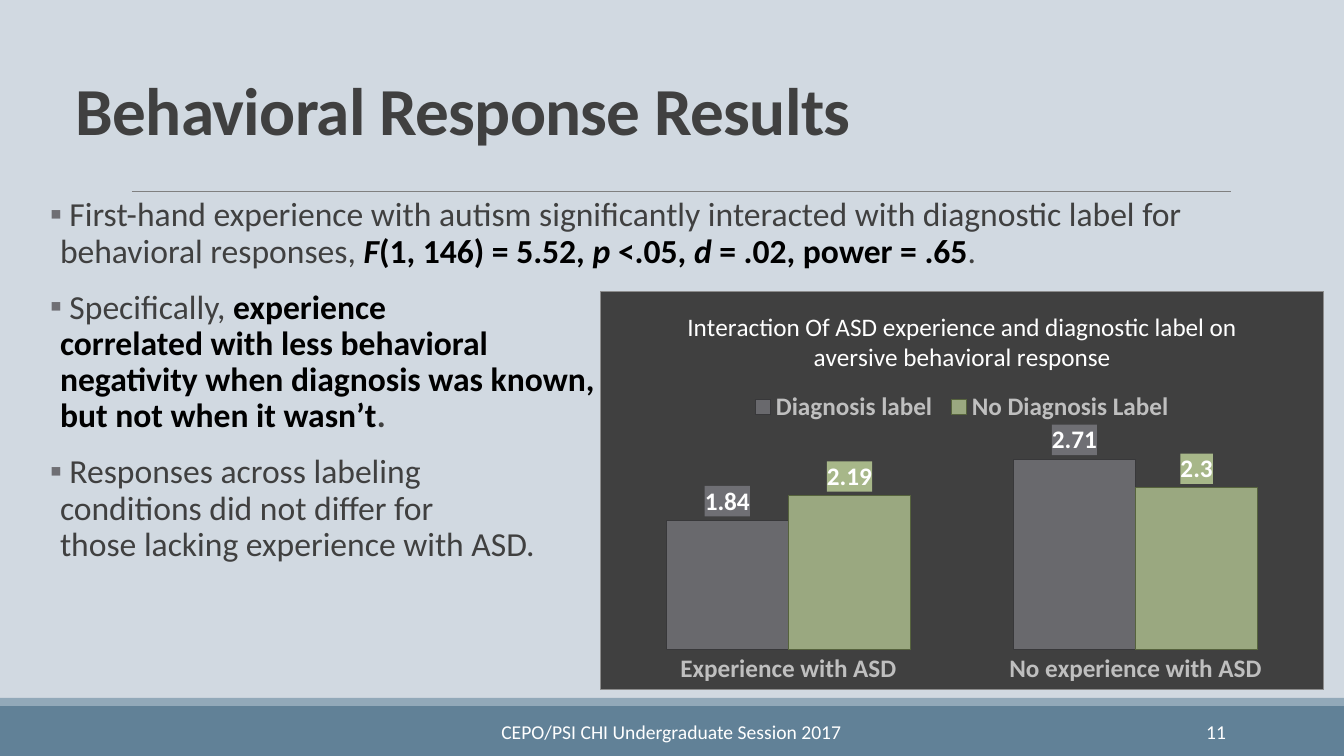
"""Build the Behavioral Response Results slide with its interaction chart."""
import dataclasses
import typing

import pptx
import pptx.chart.data
import pptx.chart.series
import pptx.dml.color
import pptx.enum.chart
import pptx.enum.shapes
import pptx.enum.text
import pptx.oxml
import pptx.oxml.ns
import pptx.slide
import pptx.util

RGBColor = pptx.dml.color.RGBColor
ALIGN = pptx.enum.text.PP_ALIGN
ANCHOR = pptx.enum.text.MSO_ANCHOR
BACKGROUND = RGBColor(0xD1, 0xD9, 0xE1)
BAND = RGBColor(0x61, 0x81, 0x97)
STRIPE = RGBColor(0x92, 0xA9, 0xB9)
RULE = RGBColor(0x80, 0x80, 0x80)
DARK = RGBColor(0x40, 0x40, 0x40)
BLACK = RGBColor(0, 0, 0)
WHITE = RGBColor(0xFF, 0xFF, 0xFF)
PALE = RGBColor(0xBF, 0xBF, 0xBF)
BORDER = RGBColor(0x8C, 0x8C, 0x8C)
GREY = RGBColor(0x6F, 0x6F, 0x74)
GREY_EDGE = RGBColor(0x38, 0x38, 0x3A)
GREEN = RGBColor(0xA7, 0xB7, 0x89)
GREEN_EDGE = RGBColor(0x56, 0x63, 0x3D)
FONT = "Calibri"
EMU_PER_PX = 914400 / 100.8


@dataclasses.dataclass(frozen=True)
class Box:
    left: int
    top: int
    width: int
    height: int

    def emu(self) -> tuple[int, ...]:
        return tuple(px(side) for side in dataclasses.astuple(self))


@dataclasses.dataclass(frozen=True)
class Piece:
    text: str
    color: RGBColor = DARK
    bold: bool = False
    italic: bool = False


@dataclasses.dataclass(frozen=True)
class Label:
    box: Box
    pieces: list[list[Piece]]
    size: int
    frame: dict[str, typing.Any]
    paragraph: dict[str, typing.Any]
    bullet: bool = False
    spacing: int = 0


@dataclasses.dataclass(frozen=True)
class Condition:
    name: str
    means: tuple[float, float]
    color: RGBColor
    edge: RGBColor


def stat(text: str, italic: bool = False) -> Piece:
    return Piece(text, BLACK, True, italic)


BANDS = [(Box(0, 706, 1344, 50), BAND), (Box(0, 698, 1344, 8), STRIPE)]
FINDINGS = [
    [Piece(" First-hand experience with autism significantly interacted with "
           "diagnostic label for behavioral responses, "),
     stat("F", True), stat("(1, 146) = 5.52, "), stat("p ", True), stat("<.05, "),
     stat("d", True), stat(" = .02, power = .65"), Piece(".")],
    [Piece(" Specifically, "),
     stat("experience\ncorrelated with less behavioral\n"
          "negativity when diagnosis was known,\nbut not when it wasn’t"),
     Piece(".", bold=True)],
    [Piece(" Responses across labeling\nconditions did not differ for\n"
           "those lacking experience with ASD.")],
]
LABELS = [
    Label(Box(66, 60, 1109, 94), [[Piece("Behavioral Response Results", bold=True)]], 48,
          {"vertical_anchor": ANCHOR.BOTTOM}, {"line_spacing": 0.85}, spacing=-50),
    Label(Box(50, 193, 1244, 444), FINDINGS, 24, {"margin_left": 0, "margin_right": 0},
          {"line_spacing": 0.9, "space_before": pptx.util.Pt(12),
           "space_after": pptx.util.Pt(2)}, bullet=True),
    Label(Box(406, 712, 531, 40), [[Piece("CEPO/PSI CHI Undergraduate Session 2017", WHITE)]],
          14, {"vertical_anchor": ANCHOR.MIDDLE}, {"alignment": ALIGN.CENTER}),
    Label(Box(1092, 712, 144, 40), [[Piece("11", WHITE)]],
          14, {"vertical_anchor": ANCHOR.MIDDLE}, {"alignment": ALIGN.RIGHT}),
]
GROUPS = ("Experience with ASD", "No experience with ASD")
CONDITIONS = [
    Condition("Diagnosis label", (1.84, 2.71), GREY, GREY_EDGE),
    Condition("No Diagnosis Label", (2.19, 2.3), GREEN, GREEN_EDGE),
]


def px(length: int) -> int:
    return round(length * EMU_PER_PX)


def xml(markup: str) -> typing.Any:
    head, mark, tail = markup.partition("/>" if markup.find(">") == markup.find("/>") + 1
                                        else ">")
    return pptx.oxml.parse_xml(f"{head} {pptx.oxml.ns.nsdecls('a', 'c')}{mark}{tail}")


def apply(target: typing.Any, values: dict[str, typing.Any]) -> None:
    for name, value in values.items():
        setattr(target, name, value)


def set_font(font: typing.Any, size: int, color: RGBColor, bold: bool = False,
             italic: bool = False) -> None:
    apply(font, {"name": FONT, "size": pptx.util.Pt(size), "bold": bold, "italic": italic})
    font.color.rgb = color


def add_band(slide: pptx.slide.Slide, box: Box, color: RGBColor) -> None:
    band = slide.shapes.add_shape(pptx.enum.shapes.MSO_SHAPE.RECTANGLE, *box.emu())
    band.shadow.inherit = False
    band.fill.solid()
    band.fill.fore_color.rgb = color
    band.line.fill.background()


def add_rule(slide: pptx.slide.Slide) -> None:
    rule = slide.shapes.add_connector(pptx.enum.shapes.MSO_CONNECTOR.STRAIGHT,
                                      px(132), px(191), px(1231), px(191))
    rule.line.color.rgb = RULE
    rule.line.width = pptx.util.Pt(0.5)
    rule._element.spPr.append(xml("<a:effectLst/>"))


def add_label(slide: pptx.slide.Slide, label: Label) -> None:
    frame = slide.shapes.add_textbox(*label.box.emu()).text_frame
    apply(frame, {"word_wrap": True, **label.frame})
    for index, pieces in enumerate(label.pieces):
        paragraph = frame.add_paragraph() if index else frame.paragraphs[0]
        apply(paragraph, label.paragraph)
        if label.bullet:
            properties = paragraph._p.get_or_add_pPr()
            properties.set("marL", str(px(10)))
            properties.set("indent", str(-px(10)))
            for markup in (f'<a:buClr><a:srgbClr val="{GREY}"/></a:buClr>',
                           f'<a:buFont typeface="{FONT}"/>', '<a:buChar char="▪"/>'):
                properties.append(xml(markup))
        for piece in pieces:
            for row, line in enumerate(piece.text.split("\n")):
                if row:
                    paragraph.add_line_break()
                run = paragraph.add_run()
                run.text = line
                set_font(run.font, label.size, piece.color, piece.bold, piece.italic)
                if label.spacing:
                    run._r.get_or_add_rPr().set("spc", str(label.spacing))


def manual_layout(left: float, top: float, width: float, height: float, inner: str = "") -> typing.Any:
    parts = {"xMode": "edge", "yMode": "edge", "x": left, "y": top, "w": width, "h": height}
    body = "".join(f'<c:{tag} val="{value}"/>' for tag, value in parts.items())
    return xml(f"<c:layout><c:manualLayout>{inner}{body}</c:manualLayout></c:layout>")


def style_bars(bars: pptx.chart.series.BarSeries, condition: Condition) -> None:
    bars.format.fill.solid()
    bars.format.fill.fore_color.rgb = condition.color
    bars.format.line.color.rgb = condition.edge
    bars.format.line.width = pptx.util.Pt(0.75)
    bars._element.xpath("c:spPr/a:solidFill/a:srgbClr")[0].append(xml('<a:alpha val="88000"/>'))
    labels = bars.data_labels
    apply(labels, {"show_value": True,
                   "position": pptx.enum.chart.XL_LABEL_POSITION.OUTSIDE_END})
    set_font(labels.font, 18, WHITE, True)
    labels._element.xpath("c:txPr")[0].addprevious(xml(
        f'<c:spPr><a:solidFill><a:srgbClr val="{condition.color}">'
        '<a:alpha val="88000"/></a:srgbClr></a:solidFill></c:spPr>'))


def add_interaction_chart(slide: pptx.slide.Slide) -> None:
    means = pptx.chart.data.CategoryChartData()
    means.categories = GROUPS
    for condition in CONDITIONS:
        means.add_series(condition.name, condition.means)
    chart = slide.shapes.add_chart(pptx.enum.chart.XL_CHART_TYPE.COLUMN_CLUSTERED,
                                   *Box(600, 291, 724, 399).emu(), means).chart
    set_font(chart.font, 10, BLACK)
    apply(chart, {"has_title": True, "has_legend": True})
    title = chart.chart_title.text_frame.paragraphs[0].add_run()
    title.text = ("Interaction Of ASD experience and diagnostic label on "
                  "aversive behavioral response")
    set_font(title.font, 18, WHITE)
    apply(chart.legend, {"position": pptx.enum.chart.XL_LEGEND_POSITION.TOP,
                         "include_in_layout": False})
    set_font(chart.legend.font, 18, PALE, True)
    apply(chart.value_axis, {"visible": False, "has_major_gridlines": False,
                             "minimum_scale": 0, "maximum_scale": 3})
    chart.category_axis.major_tick_mark = pptx.enum.chart.XL_TICK_MARK.NONE
    chart.category_axis.format.line.fill.background()
    set_font(chart.category_axis.tick_labels.font, 18, PALE, True)
    plot = chart.plots[0]
    apply(plot, {"gap_width": 84, "overlap": 0, "vary_by_categories": False})
    for bars, condition in zip(plot.series, CONDITIONS):
        style_bars(bars, condition)
    space = chart._chartSpace
    for old in space.xpath("c:chart/c:plotArea/c:layout | c:chart/c:legend/c:layout"):
        old.getparent().remove(old)
    space.xpath("c:chart/c:plotArea")[0].insert(
        0, manual_layout(0.02, 0.37, 0.96, 0.53, '<c:layoutTarget val="inner"/>'))
    space.xpath("c:chart/c:legend/c:legendPos")[0].addnext(manual_layout(0.2, 0.25, 0.6, 0.08))
    space.xpath("c:chart")[0].addnext(xml(
        f'<c:spPr><a:solidFill><a:srgbClr val="{DARK}"/></a:solidFill><a:ln w="6350">'
        f'<a:solidFill><a:srgbClr val="{BORDER}"/></a:solidFill></a:ln></c:spPr>'))


def main() -> None:
    deck = pptx.Presentation()
    apply(deck, {"slide_width": px(1344), "slide_height": px(756)})
    slide = deck.slides.add_slide(deck.slide_layouts[6])
    slide.background.fill.solid()
    slide.background.fill.fore_color.rgb = BACKGROUND
    for box, color in BANDS:
        add_band(slide, box, color)
    add_rule(slide)
    add_interaction_chart(slide)
    for label in LABELS:
        add_label(slide, label)
    deck.save("out.pptx")


if __name__ == "__main__":
    main()
